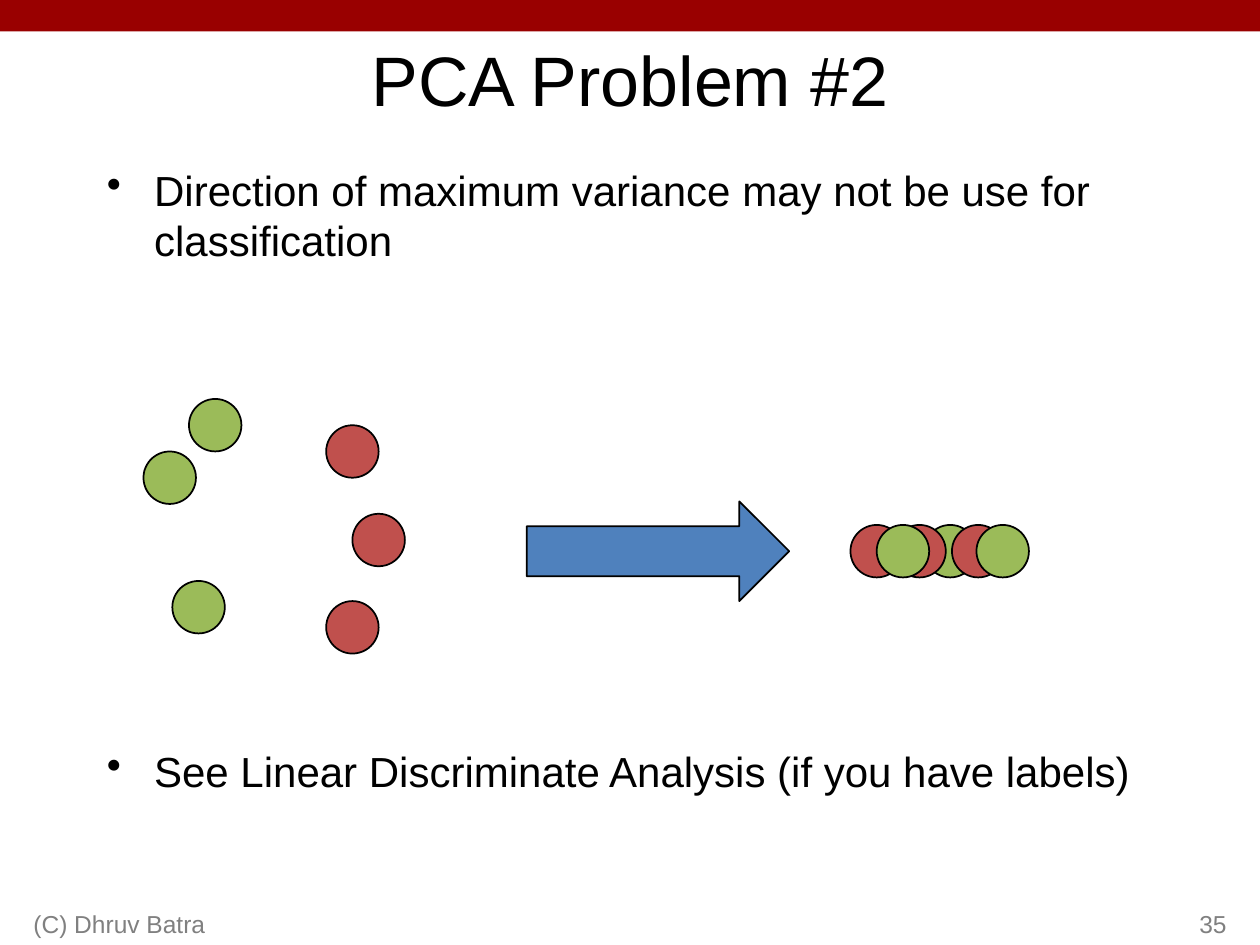
from lxml import etree
from pptx import Presentation
from pptx.dml.color import RGBColor
from pptx.enum.shapes import MSO_SHAPE
from pptx.enum.text import MSO_ANCHOR, PP_ALIGN
from pptx.oxml.ns import qn
from pptx.util import Pt

RECT, OVAL, ARROW = MSO_SHAPE.RECTANGLE, MSO_SHAPE.OVAL, MSO_SHAPE.RIGHT_ARROW
TOP, MIDDLE, BOTTOM = MSO_ANCHOR.TOP, MSO_ANCHOR.MIDDLE, MSO_ANCHOR.BOTTOM
LEFT, CENTER, RIGHT = PP_ALIGN.LEFT, PP_ALIGN.CENTER, PP_ALIGN.RIGHT

BLACK = RGBColor(0x00, 0x00, 0x00)
GRAY = RGBColor(0x80, 0x80, 0x80)
DARK_RED = RGBColor(0x99, 0x00, 0x00)
GREEN = RGBColor(0x9B, 0xBB, 0x59)
RED = RGBColor(0xC0, 0x50, 0x4D)
BLUE = RGBColor(0x4F, 0x81, 0xBD)

FONT = "Arial"
SLIDE_WIDTH, SLIDE_HEIGHT = 720, 540
INDENT = 27
DOT_SIZE = 30
PROJECTED_TOP = 300

# Left and top of each sample in the plane
SAMPLES = [
    (108, 228, GREEN), (186.4, 243, RED), (201.4, 293.6, RED),
    (186.4, 343.5, RED), (82, 258, GREEN), (98.5, 332, GREEN),
]
# Left of each sample on the projection line, back to front
PROJECTIONS = [
    (528, GREEN), (544, RED), (510.5, RED),
    (486, RED), (558, GREEN), (501, GREEN),
]


def add_figure(slide, kind, left, top, width, height, fill, outlined=True):
    figure = slide.shapes.add_shape(kind, Pt(left), Pt(top), Pt(width), Pt(height))
    figure.shadow.inherit = False
    figure.fill.solid()
    figure.fill.fore_color.rgb = fill
    if outlined:
        figure.line.color.rgb = BLACK
        figure.line.width = Pt(1)
    else:
        figure.line.fill.background()


def add_dot(slide, left, top, color):
    add_figure(slide, OVAL, left, top, DOT_SIZE, DOT_SIZE, color)


def add_text(slide, left, top, width, height, lines, size, color, align, anchor):
    box = slide.shapes.add_textbox(Pt(left), Pt(top), Pt(width), Pt(height))
    frame = box.text_frame
    frame.word_wrap = True
    frame.vertical_anchor = anchor
    frame.text = "\n".join(lines)
    for paragraph in frame.paragraphs:
        paragraph.alignment = align
        paragraph.font.name = FONT
        paragraph.font.size = Pt(size)
        paragraph.font.color.rgb = color
    return frame.paragraphs


def add_bullet(paragraph):
    properties = paragraph._p.get_or_add_pPr()
    properties.set("marL", str(Pt(INDENT)))
    properties.set("indent", str(-Pt(INDENT)))
    bullet = etree.Element(qn("a:buChar"), char="•")
    properties.find(qn("a:defRPr")).addprevious(bullet)


def add_points(slide):
    points = add_text(slide, 54, 90, 612, 414, [
        "Direction of maximum variance may not be use for classification",
        "See Linear Discriminate Analysis (if you have labels)",
    ], 24, BLACK, LEFT, TOP)
    for point in points:
        point.line_spacing = Pt(29)
        add_bullet(point)
    # Room for the diagram between the two points
    points[1].space_before = Pt(274)


def main():
    presentation = Presentation()
    presentation.slide_width = Pt(SLIDE_WIDTH)
    presentation.slide_height = Pt(SLIDE_HEIGHT)
    slide = presentation.slides.add_slide(presentation.slide_layouts[6])

    # Banner, title and footer
    add_figure(slide, RECT, 0, 0, SLIDE_WIDTH, 18, DARK_RED, outlined=False)
    add_text(slide, 54, 18, 612, 54, ["PCA Problem #2"], 40, BLACK, CENTER, MIDDLE)
    add_text(slide, 12, 504, 228, 36, ["(C) Dhruv Batra"], 14, GRAY, LEFT, BOTTOM)
    add_text(slide, 558, 504, 150, 36, ["35"], 14, GRAY, RIGHT, BOTTOM)

    add_points(slide)

    # Samples projected onto one line
    for left, top, color in SAMPLES:
        add_dot(slide, left, top, color)
    for left, color in PROJECTIONS:
        add_dot(slide, left, PROJECTED_TOP, color)
    add_figure(slide, ARROW, 301, 286.5, 150, 57, BLUE)

    presentation.save("out.pptx")


if __name__ == "__main__":
    main()
